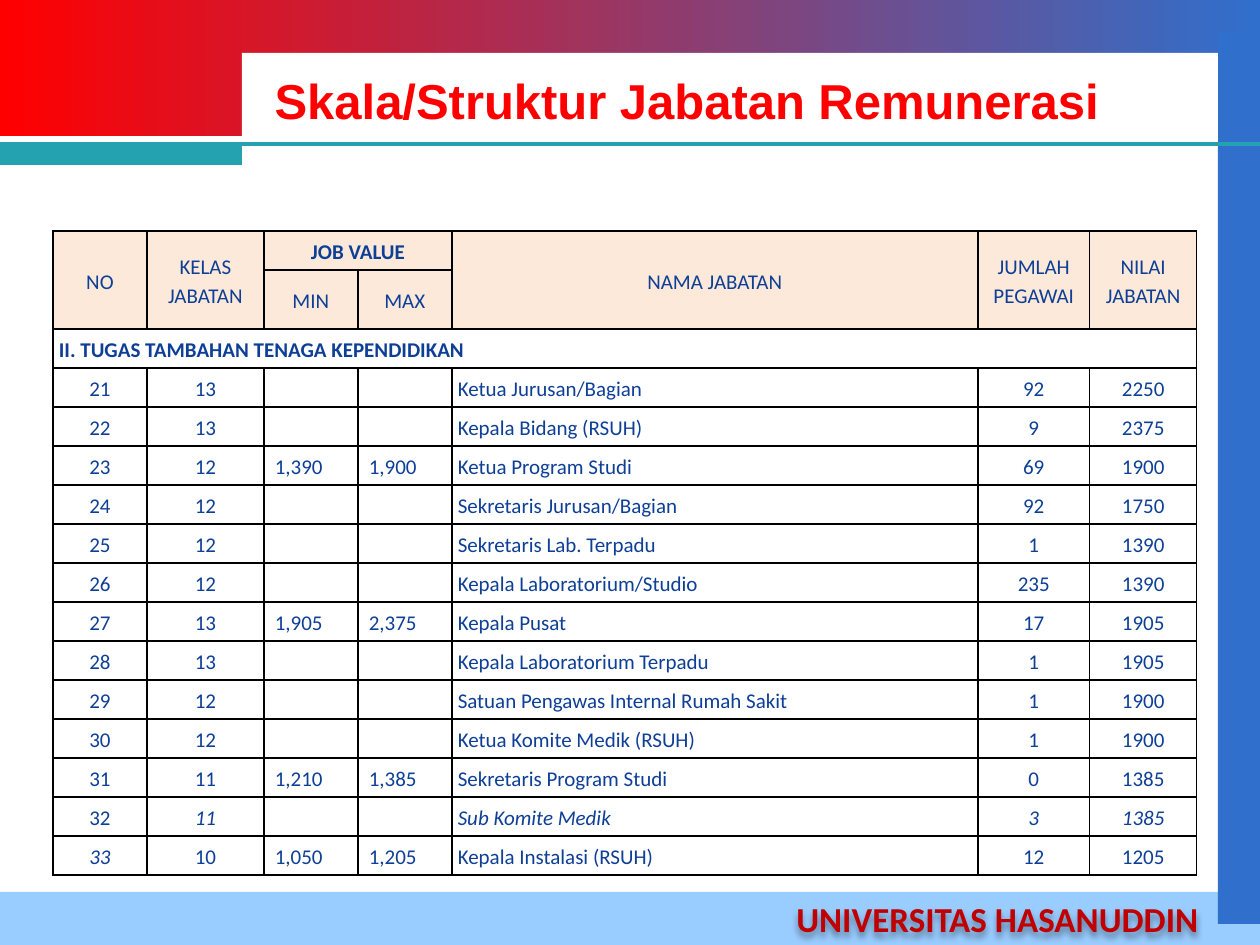
from lxml import etree
from pptx import Presentation
from pptx.dml.color import RGBColor
from pptx.enum.shapes import MSO_CONNECTOR, MSO_SHAPE
from pptx.enum.text import MSO_ANCHOR, PP_ALIGN
from pptx.oxml.ns import qn
from pptx.util import Pt

RECT = MSO_SHAPE.RECTANGLE
STRAIGHT = MSO_CONNECTOR.STRAIGHT
MIDDLE = MSO_ANCHOR.MIDDLE
LEFT, CENTER = PP_ALIGN.LEFT, PP_ALIGN.CENTER
PX_PER_INCH = 126
TITLE_ONLY = 5

COLUMNS = [94, 117, 94, 94, 526, 112, 107]
ROW_HEIGHT, SUBHEAD_HEIGHT = 39, 44
HEADINGS = {0: "NO", 1: "KELAS JABATAN", 4: "NAMA JABATAN",
            5: "JUMLAH PEGAWAI", 6: "NILAI JABATAN"}
SECTION = "II. TUGAS TAMBAHAN TENAGA KEPENDIDIKAN"
POSITIONS = [
    ("21", "13", "", "", "Ketua Jurusan/Bagian", "92", "2250"),
    ("22", "13", "", "", "Kepala Bidang (RSUH)", "9", "2375"),
    ("23", "12", "1,390", "1,900", "Ketua Program Studi", "69", "1900"),
    ("24", "12", "", "", "Sekretaris Jurusan/Bagian", "92", "1750"),
    ("25", "12", "", "", "Sekretaris Lab. Terpadu", "1", "1390"),
    ("26", "12", "", "", "Kepala Laboratorium/Studio", "235", "1390"),
    ("27", "13", "1,905", "2,375", "Kepala Pusat", "17", "1905"),
    ("28", "13", "", "", "Kepala Laboratorium Terpadu", "1", "1905"),
    ("29", "12", "", "", "Satuan Pengawas Internal Rumah Sakit", "1", "1900"),
    ("30", "12", "", "", "Ketua Komite Medik (RSUH)", "1", "1900"),
    ("31", "11", "1,210", "1,385", "Sekretaris Program Studi", "0", "1385"),
    ("32", "11", "", "", "Sub Komite Medik", "3", "1385"),
    ("33", "10", "1,050", "1,205", "Kepala Instalasi (RSUH)", "12", "1205"),
]
ITALIC_CELLS = {("32", column) for column in range(1, 7)} | {("33", 0)}


def px(length):
    return round(length * 914400 / PX_PER_INCH)


def rgb(value):
    return RGBColor.from_string(value)


def write(frame, text, size=12, font="Calibri", color="0E3F96", bold=False,
          italic=False, align=LEFT, spacing=None):
    paragraph = frame.paragraphs[0]
    paragraph.alignment = align
    if spacing:
        paragraph.line_spacing = spacing
    run = paragraph.add_run()
    run.text = text
    run.font.size = Pt(size)
    run.font.name = font
    run.font.color.rgb = rgb(color)
    run.font.bold = bold
    run.font.italic = italic


def add_band(slide, x, y, width, height, *colors):
    band = slide.shapes.add_shape(RECT, px(x), px(y), px(width), px(height))
    band.shadow.inherit = False
    band.line.fill.background()
    if len(colors) == 1:
        band.fill.solid()
        band.fill.fore_color.rgb = rgb(colors[0])
    else:
        band.fill.gradient()
        band.fill.gradient_angle = 0
        for stop, color in zip(band.fill.gradient_stops, colors):
            stop.color.rgb = rgb(color)


def add_backdrop(slide, x, y, width, height):
    side, title_left, rule_top = 42, 242, 144
    add_band(slide, x, y, width, 136, "FF0000", "306FCC")
    add_band(slide, x, y + height - 53, width, 53, "99CCFF")
    add_band(slide, x + width - side, y + 32, side, 892, "306FCC")
    add_band(slide, x + title_left, y + 53, width - side - title_left, 94, "FFFFFF")
    rule = slide.shapes.add_connector(
        STRAIGHT, px(x), px(y + rule_top), px(x + width), px(y + rule_top))
    rule.line.color.rgb = rgb("25A2AF")
    rule.line.width = Pt(2.25)
    etree.SubElement(rule._element.spPr, qn("a:effectLst"))
    add_band(slide, x, y + rule_top, title_left, 21, "25A2AF")


def add_university(slide, x, y, width, height):
    university = slide.shapes.add_textbox(px(x), px(y), px(width), px(height))
    university.text_frame.word_wrap = False
    write(university.text_frame, "UNIVERSITAS HASANUDDIN", size=20,
          color="C00000", bold=True)
    effects = etree.SubElement(university._element.spPr, qn("a:effectLst"))
    shadow = etree.SubElement(effects, qn("a:outerShdw"), blurRad="50800",
                              dist="38100", dir="5400000")
    tint = etree.SubElement(shadow, qn("a:srgbClr"), val="000000")
    etree.SubElement(tint, qn("a:alpha"), val="40000")


def place_title(slide, x, y, width, height):
    title = slide.shapes.title
    title.left, title.top, title.width, title.height = map(px, (x, y, width, height))
    title.text_frame.vertical_anchor = MIDDLE
    title.text_frame.word_wrap = True
    write(title.text_frame, "Skala/Struktur Jabatan Remunerasi", size=28,
          font="Arial", color="FF0000", bold=True)
    slide.shapes._spTree.append(title._element)


def style_cell(cell, fill):
    properties = cell._tc.get_or_add_tcPr()
    for edge in ("a:lnL", "a:lnR", "a:lnT", "a:lnB"):
        border = etree.SubElement(properties, qn(edge), w=str(Pt(1)))
        paint = etree.SubElement(border, qn("a:solidFill"))
        etree.SubElement(paint, qn("a:srgbClr"), val="000000")
    cell.fill.solid()
    cell.fill.fore_color.rgb = rgb(fill)
    cell.margin_left = cell.margin_right = px(6)
    cell.margin_top = cell.margin_bottom = 0
    cell.vertical_anchor = MIDDLE


def fill_headings(table):
    def head(row, column, text, bold=False):
        write(table.cell(row, column).text_frame, text, bold=bold,
              align=CENTER, spacing=1.15)

    for column, heading in HEADINGS.items():
        table.cell(0, column).merge(table.cell(1, column))
        head(0, column, heading)
    table.cell(0, 2).merge(table.cell(0, 3))
    head(0, 2, "JOB VALUE", bold=True)
    head(1, 2, "MIN")
    head(1, 3, "MAX")
    table.cell(2, 0).merge(table.cell(2, len(COLUMNS) - 1))
    write(table.cell(2, 0).text_frame, SECTION, bold=True, spacing=1.15)


def add_positions(slide, x, y):
    heights = [ROW_HEIGHT] * (len(POSITIONS) + 3)
    heights[1] = SUBHEAD_HEIGHT
    table = slide.shapes.add_table(
        len(heights), len(COLUMNS), px(x), px(y),
        px(sum(COLUMNS)), px(sum(heights))).table
    for column, width in zip(table.columns, COLUMNS):
        column.width = px(width)
    for index, (row, height) in enumerate(zip(table.rows, heights)):
        row.height = px(height)
        for cell in row.cells:
            style_cell(cell, "FDE9D9" if index < 2 else "FFFFFF")
    fill_headings(table)
    for index, position in enumerate(POSITIONS, start=3):
        for column, text in enumerate(position):
            if not text:
                continue
            cell = table.cell(index, column)
            if column in (2, 3):
                cell.margin_left = px(11)
            write(cell.text_frame, text, spacing=1.15,
                  italic=(position[0], column) in ITALIC_CELLS,
                  align=LEFT if column in (2, 3, 4) else CENTER)


def main():
    deck = Presentation()
    deck.slide_width, deck.slide_height = px(1260), px(945)
    slide = deck.slides.add_slide(deck.slide_layouts[TITLE_ONLY])
    add_backdrop(slide, 0, 0, 1260, 945)
    add_university(slide, 784, 891, 431, 55)
    place_title(slide, 262, 63, 945, 73)
    add_positions(slide, 53, 231)
    deck.save("out.pptx")


if __name__ == "__main__":
    main()
